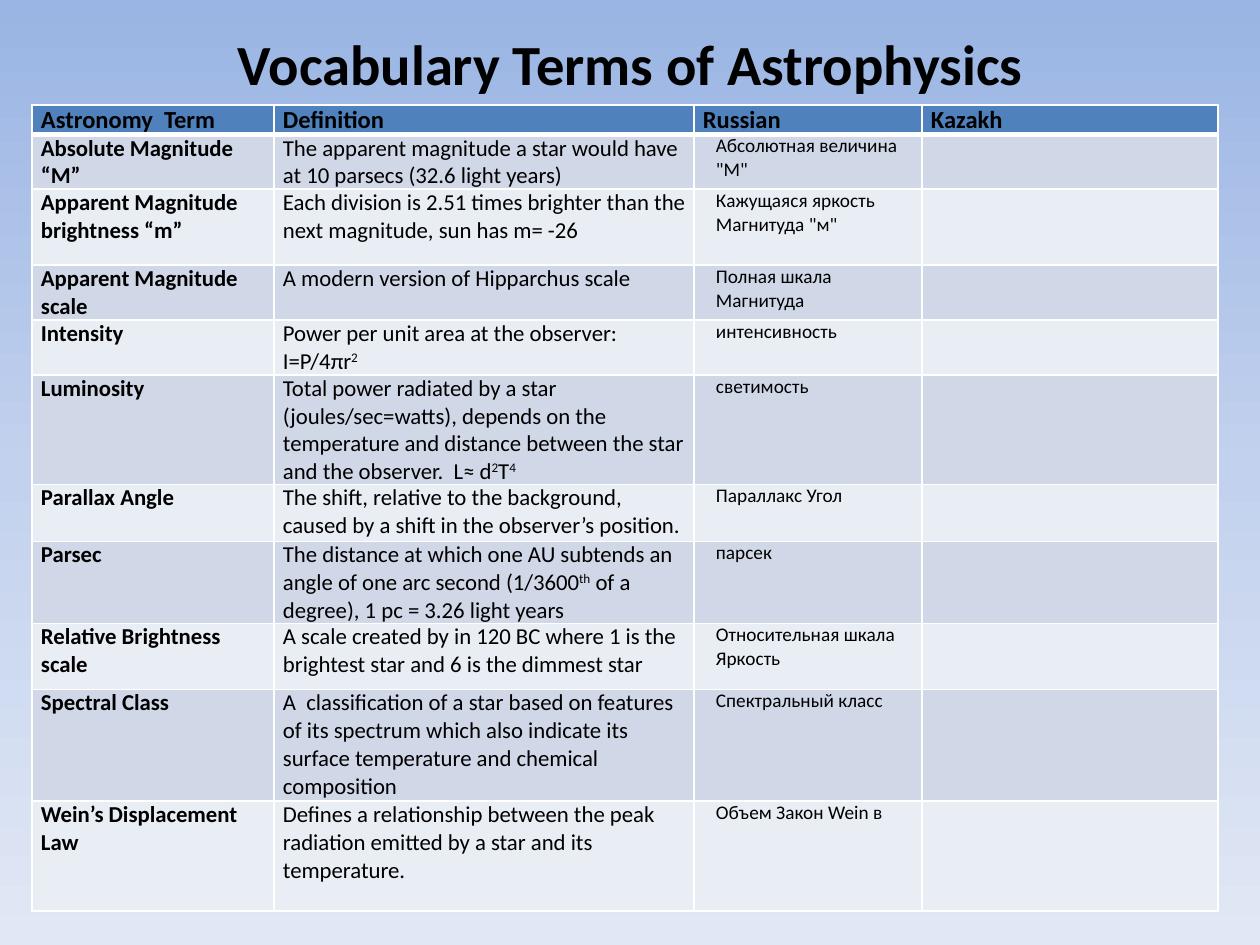
"""Build the slide with a table of astrophysics vocabulary."""
from pptx import Presentation, util as u
from pptx.dml import color
from pptx.enum import text
from pptx.oxml import ns
from lxml import etree

EMU_PER_PX = 914400 / 126
FONT = "Calibri"
COLORS = {
    "text": "000000", "border": "FFFFFF", "header": "4F81BD",
    "odd": "D0D8E8", "even": "E9EDF4",
}
BACKGROUND_STOPS = [(0, "9AB5E4"), (50, "C2D1ED"), (100, "E1E8F5")]
COLUMN_WIDTHS = [242, 420, 228, 296]
ROW_HEIGHTS = [29, 54, 76, 55, 53, 107, 57, 79, 66, 112, 110]
HEADERS = ["Astronomy  Term", "Definition", "Russian", "Kazakh"]
TERMS = [
    ("Absolute Magnitude “M”",
     "The apparent magnitude a star would have at 10 parsecs (32.6 light years)",
     'Абсолютная величина "М"'),
    ("Apparent Magnitude brightness “m”",
     "Each division is 2.51 times brighter than the next magnitude, sun has m= -26",
     'Кажущаяся яркость Магнитуда "м"'),
    ("Apparent Magnitude scale",
     "A modern version of Hipparchus scale",
     "Полная шкала Магнитуда"),
    ("Intensity",
     "Power per unit area at the observer: I=P/4πr^2^",
     "интенсивность"),
    ("Luminosity",
     "Total power radiated by a star (joules/sec=watts), depends on the temperature "
     "and distance between the star and the observer.  L≈ d^2^T^4^",
     "светимость"),
    ("Parallax Angle",
     "The shift, relative to the background, caused by a shift in the observer’s position.",
     "Параллакс Угол"),
    ("Parsec",
     "The distance at which one AU subtends an angle of one arc second "
     "(1/3600^th^ of a degree), 1 pc = 3.26 light years",
     "парсек"),
    ("Relative Brightness scale",
     "A scale created by in 120 BC where 1 is the brightest star and 6 is the dimmest star",
     "Относительная шкала Яркость"),
    ("Spectral Class",
     "A  classification of a star based on features of its spectrum which also indicate "
     "its surface temperature and chemical composition",
     "Спектральный класс"),
    ("Wein’s Displacement Law",
     "Defines a relationship between the peak radiation emitted by a star and its temperature.",
     "Объем Закон Wein в"),
]


def px(length):
    """Turn pixels into EMU."""
    return u.Emu(round(length * EMU_PER_PX))


def add_runs(paragraph, content, size, bold=False):
    """Add text run by run; parts between carets are superscript."""
    for index, part in enumerate(content.split("^")):
        if not part:
            continue
        run = paragraph.add_run()
        run.text = part
        run.font.name = FONT
        run.font.size = u.Pt(size)
        run.font.bold = bold
        run.font.color.rgb = color.RGBColor.from_string(COLORS["text"])
        if index % 2:
            run._r.get_or_add_rPr().set("baseline", "30000")


def set_background(slide):
    """Fill the slide with a vertical gradient."""
    fill = slide.background.fill
    fill.gradient()
    fill.gradient_angle = 270
    stops = slide._element.find(".//" + ns.qn("a:gsLst"))
    for stop in list(stops):
        stops.remove(stop)
    for position, value in BACKGROUND_STOPS:
        stop = etree.SubElement(stops, ns.qn("a:gs"), pos=str(position * 1000))
        etree.SubElement(stop, ns.qn("a:srgbClr"), val=value)


def add_title(slide, content):
    """Add the centred title."""
    frame = slide.shapes.add_textbox(px(95), px(21), px(1071), px(84)).text_frame
    frame.word_wrap = True
    frame.vertical_anchor = text.MSO_ANCHOR.MIDDLE
    paragraph = frame.paragraphs[0]
    paragraph.alignment = text.PP_ALIGN.CENTER
    add_runs(paragraph, content, 32.4, True)


def style_cell(cell, fill, bottom=1):
    """Set margins, borders and fill of a cell."""
    cell.margin_left = cell.margin_right = px(9)
    cell.margin_top = cell.margin_bottom = 0
    properties = cell._tc.get_or_add_tcPr()
    for side, width in (("L", 1), ("R", 1), ("T", 1), ("B", bottom)):
        line = etree.SubElement(properties, ns.qn(f"a:ln{side}"), w=str(u.Pt(width)))
        solid = etree.SubElement(line, ns.qn("a:solidFill"))
        etree.SubElement(solid, ns.qn("a:srgbClr"), val=COLORS["border"])
    cell.fill.solid()
    cell.fill.fore_color.rgb = color.RGBColor.from_string(COLORS[fill])


def add_header(table):
    """Fill the header row."""
    for column, label in enumerate(HEADERS):
        cell = table.cell(0, column)
        style_cell(cell, "header", 3)
        paragraph = cell.text_frame.paragraphs[0]
        if column > 1:
            paragraph.alignment = text.PP_ALIGN.JUSTIFY
        add_runs(paragraph, label, 14, True)


def add_term(table, row, term, definition, russian):
    """Fill one row, leaving the last column empty."""
    cells = list(table.rows[row].cells)
    for cell in cells:
        style_cell(cell, "odd" if row % 2 else "even")
    paragraphs = [cell.text_frame.paragraphs[0] for cell in cells]
    add_runs(paragraphs[0], term, 13, True)
    add_runs(paragraphs[1], definition, 13)
    add_runs(paragraphs[2], russian, 11)
    paragraphs[2]._p.get_or_add_pPr().set("marL", str(px(13)))


def add_vocabulary(slide):
    """Add the vocabulary table."""
    table = slide.shapes.add_table(
        len(ROW_HEIGHTS), len(COLUMN_WIDTHS), px(32), px(105),
        px(sum(COLUMN_WIDTHS)), px(sum(ROW_HEIGHTS))).table
    for column, width in zip(table.columns, COLUMN_WIDTHS):
        column.width = px(width)
    for row, height in zip(table.rows, ROW_HEIGHTS):
        row.height = px(height)
    add_header(table)
    for row, entry in enumerate(TERMS, 1):
        add_term(table, row, *entry)


def main():
    """Build and save the presentation."""
    presentation = Presentation()
    presentation.slide_width, presentation.slide_height = px(1260), px(945)
    slide = presentation.slides.add_slide(presentation.slide_layouts[6])
    set_background(slide)
    add_title(slide, "Vocabulary Terms of Astrophysics")
    add_vocabulary(slide)
    presentation.save("out.pptx")


if __name__ == "__main__":
    main()
